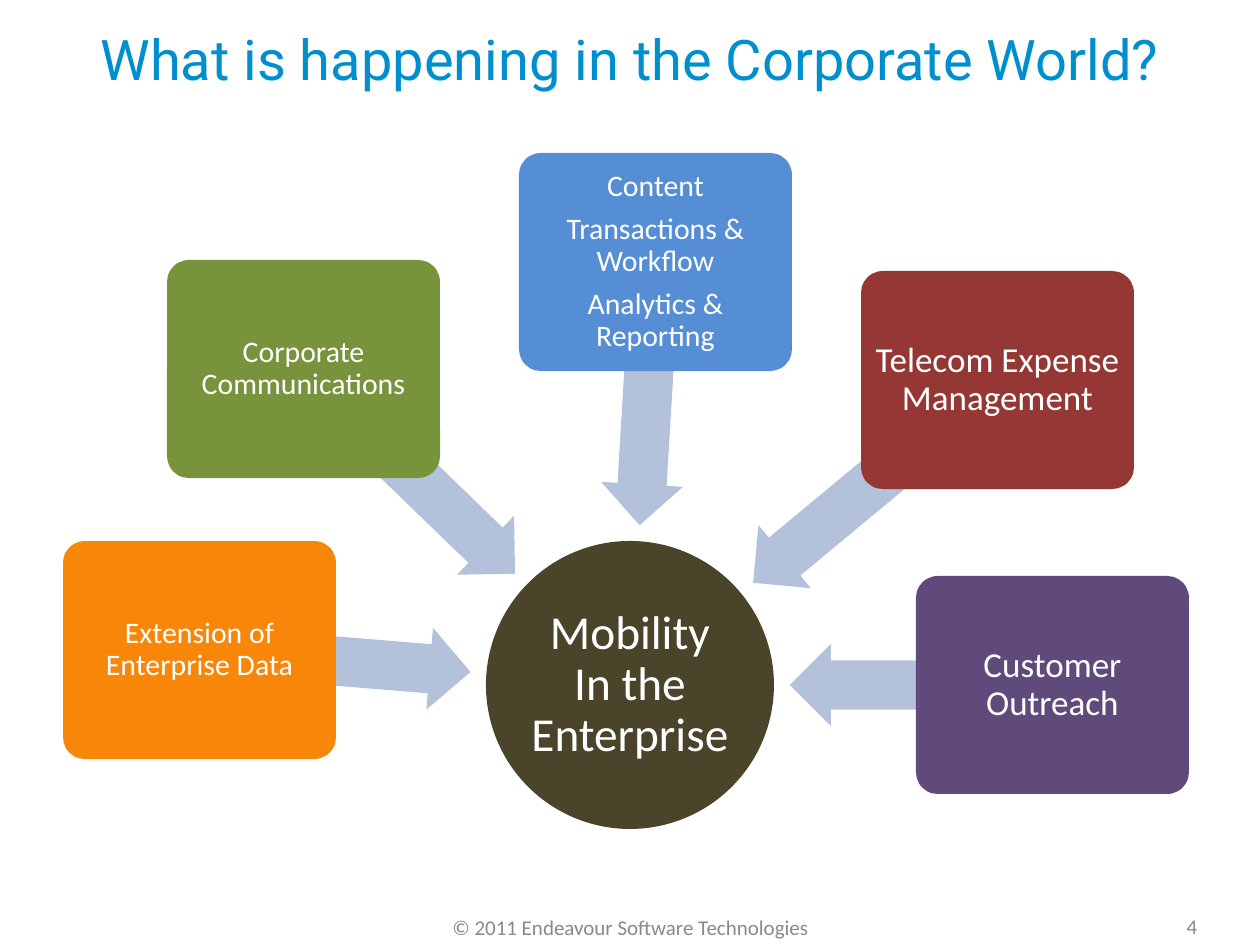
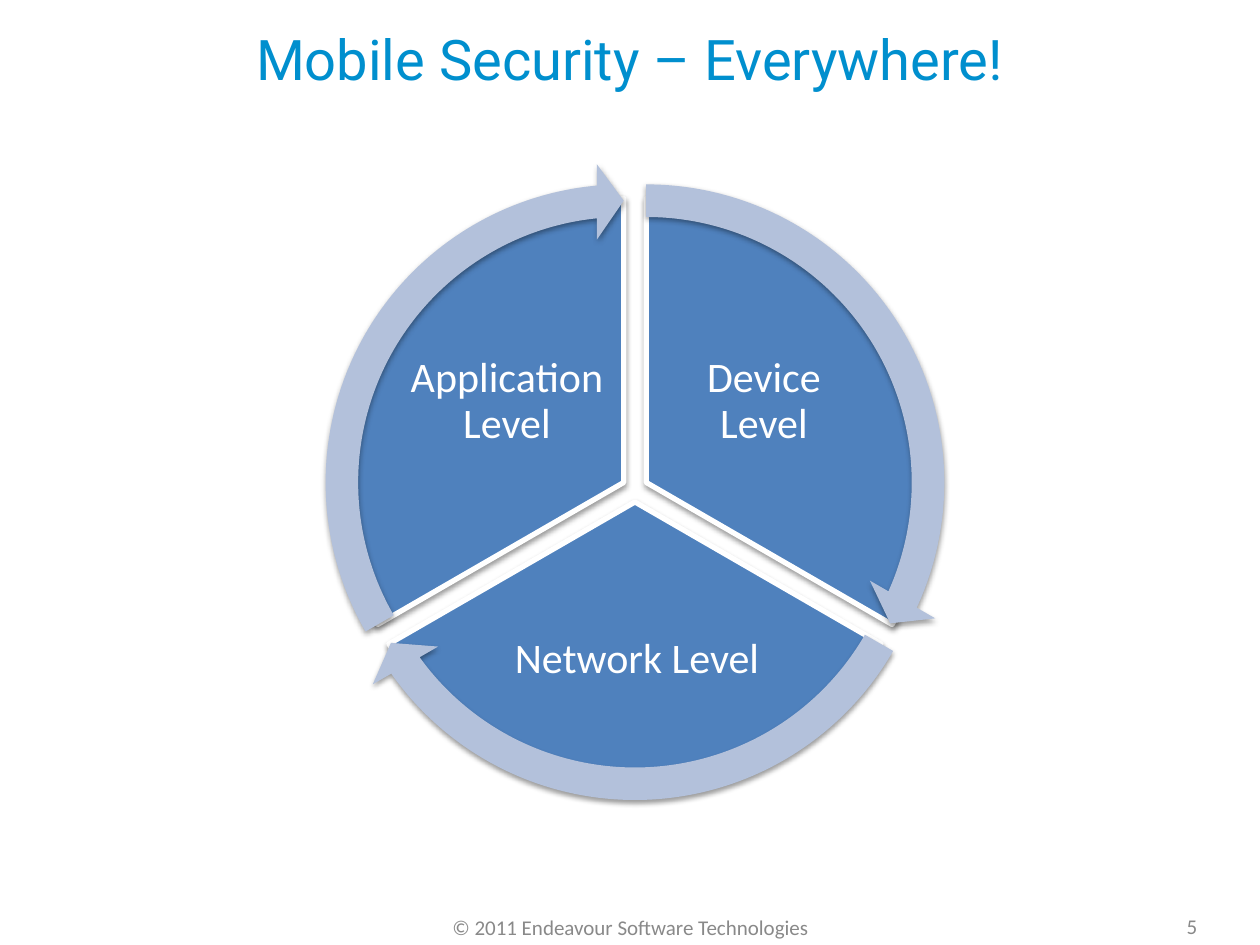
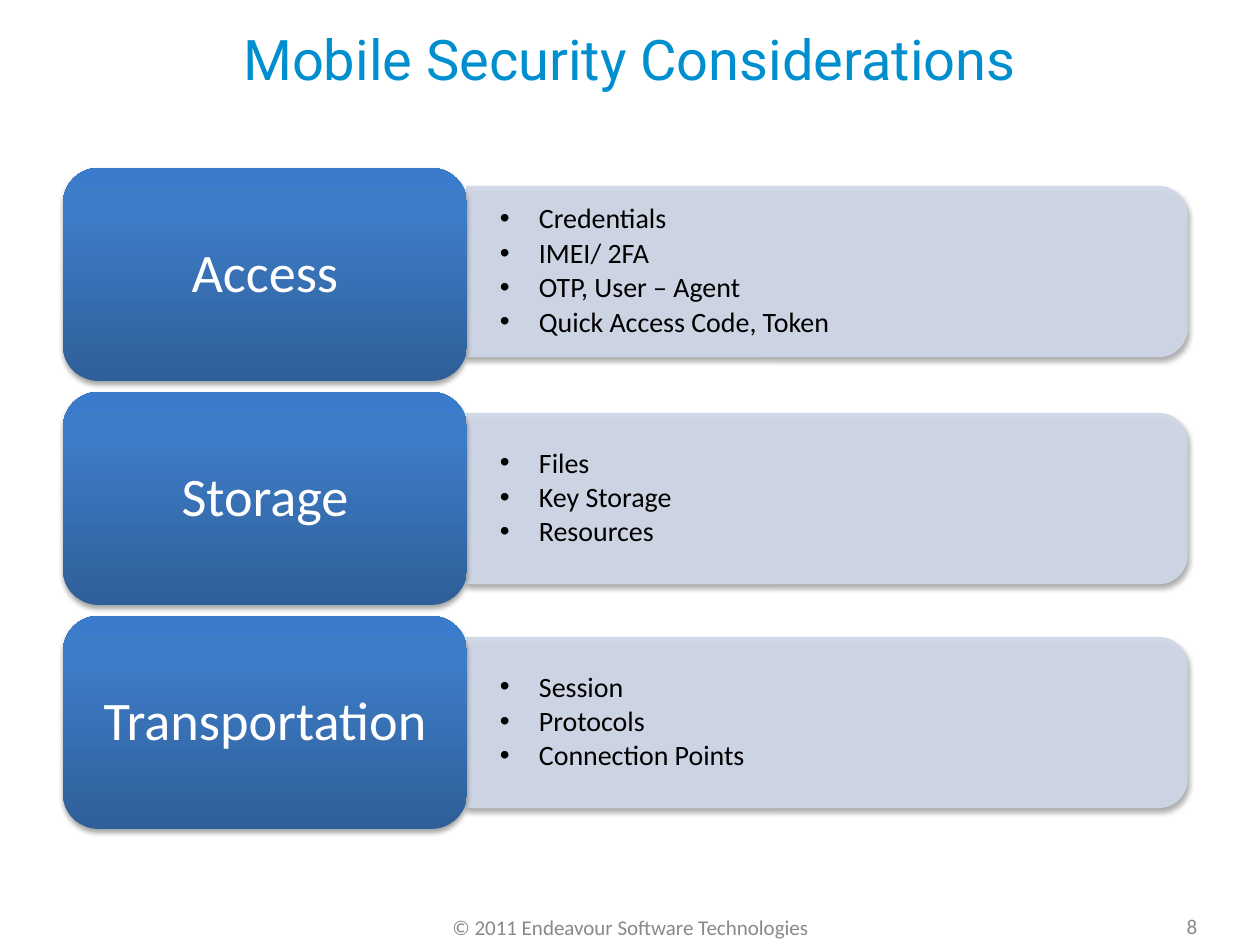
from collections import namedtuple
from copy import deepcopy
from dataclasses import dataclass
from math import atan2, cos, degrees, hypot, radians, sin

from lxml.etree import SubElement
from pptx import Presentation
from pptx.dml.color import RGBColor
from pptx.enum.shapes import MSO_SHAPE
from pptx.enum.text import MSO_ANCHOR, PP_ALIGN
from pptx.oxml.ns import qn
from pptx.util import Pt

Box = namedtuple("Box", "x y w h")


@dataclass(frozen=True)
class Theme:
    title: str = "008FCE"
    muted: str = "898989"
    white: str = "FFFFFF"
    black: str = "000000"
    arrow: str = "B3C1DB"
    hub: str = "4A452A"
    orange: str = "F88608"
    green: str = "77933C"
    blue: str = "558ED5"
    red: str = "953735"
    purple: str = "604A7B"
    wedge: str = "4F81BD"
    panel: str = "D0D8E8"
    gradient: tuple = ((0, "2F5F99"), (0.8, "3D7CC7"), (1, "3A7CCB"))
    title_font: str = "Roboto"
    body_font: str = "Calibri"
    title_size: int = 32
    heading_size: int = 31
    hub_size: int = 27
    wedge_size: int = 24
    node_large: int = 20
    node_size: int = 17
    bullet_size: int = 16
    footer_size: int = 12


T = Theme()
FOOTER = "© 2011 Endeavour Software Technologies"
TITLE_BOX = Box(63, 0, 1134, 116)
FOOTER_BOX = Box(431, 910, 399, 35)
NUMBER_BOX = Box(1124, 908, 136, 37)


# Shared helpers
def px(n):
    return round(n * 914400 / 126)


def centred(cx, cy, w, h):
    return Box(cx - w / 2, cy - h / 2, w, h)


def place(box):
    return [px(n) for n in box]


def set_text(s, text, size, color, font=T.body_font, align=PP_ALIGN.CENTER,
             insets=None, after=None, bullets=False):
    tf = s.text_frame
    tf.word_wrap = True
    tf.vertical_anchor = MSO_ANCHOR.MIDDLE
    if insets:
        tf.margin_left = tf.margin_right = px(insets[0])
        tf.margin_top = tf.margin_bottom = px(insets[1])
    tf.text = text
    for p in tf.paragraphs:
        p.alignment = align
        if after is not None:
            p.line_spacing = 0.9
            p.space_after = Pt(size * after)
        if bullets:
            p.level = 1
            pPr = p._p.get_or_add_pPr()
            pPr.set("marL", str(px(63)))
            pPr.set("indent", str(px(-39)))
            SubElement(pPr, qn("a:buFont"), typeface="Arial")
            SubElement(pPr, qn("a:buChar"), char="•")
        for r in p.runs:
            r.font.name = font
            r.font.size = Pt(size)
            r.font.color.rgb = RGBColor.from_string(color)


def add_label(slide, box, text, size, color, **style):
    s = slide.shapes.add_textbox(*place(box))
    set_text(s, text, size, color, **style)


def add_shape(slide, kind, box, fill=None, rotation=0, adjust=()):
    s = slide.shapes.add_shape(kind, *place(box))
    s.rotation = rotation
    s.shadow.inherit = False
    s.line.fill.background()
    if fill:
        s.fill.solid()
        s.fill.fore_color.rgb = RGBColor.from_string(fill)
    for i, value in enumerate(adjust):
        s.adjustments[i] = value
    return s


def set_line(s, color, width):
    s.line.color.rgb = RGBColor.from_string(color)
    s.line.width = Pt(width)


def set_alpha(parent, percent):
    for clr in list(parent.iter(qn("a:srgbClr"))):
        SubElement(clr, qn("a:alpha"), val=str(percent * 1000))


def add_shadow(s, alpha, distance):
    effects = s._element.spPr.find(qn("a:effectLst"))
    shadow = SubElement(effects, qn("a:outerShdw"), blurRad=str(Pt(3.1)),
                        dist=str(Pt(distance)), dir="5400000", rotWithShape="0")
    SubElement(shadow, qn("a:srgbClr"), val=T.black)
    set_alpha(shadow, alpha)


def set_gradient(s, stops):
    s.fill.gradient()
    s.fill.gradient_angle = 90
    gs_list = s._element.spPr.find(".//" + qn("a:gsLst"))
    while len(gs_list) < len(stops):
        gs_list.append(deepcopy(gs_list[0]))
    for stop, (position, color) in zip(s.fill.gradient_stops, stops):
        stop.position = position
        stop.color.rgb = RGBColor.from_string(color)


# Title and footer of every slide
def add_slide(prs, title, number):
    slide = prs.slides.add_slide(prs.slide_layouts[5])
    s = slide.shapes.title
    s.left, s.top, s.width, s.height = place(TITLE_BOX)
    set_text(s, title, T.title_size, T.title, font=T.title_font)
    for box, text in ((FOOTER_BOX, FOOTER), (NUMBER_BOX, str(number))):
        add_label(slide, box, text, T.footer_size, T.muted)
    return slide


# Hub with boxes pointing at it
NODES = [
    (0, 388, T.orange, T.node_size, "Extension of Enterprise Data"),
    (104, 107, T.green, T.node_size, "Corporate Communications"),
    (456, 0, T.blue, T.node_size,
     "Content\nTransactions & Workflow\nAnalytics & Reporting"),
    (798, 118, T.red, T.node_large, "Telecom Expense Management"),
    (853, 423, T.purple, T.node_large, "Customer Outreach"),
]


def draw_hub(slide, box):
    diameter, tip_radius, arrow_h = 288, 160, 82
    node_w, node_h = 273, 218
    cx, cy = box.x + box.w / 2, box.y + box.h - diameter / 2

    s = add_shape(slide, MSO_SHAPE.OVAL, centred(cx, cy, diameter, diameter), T.hub)
    set_text(s, "Mobility In the Enterprise", T.hub_size, T.white,
             insets=(2, 2), after=0.35)

    for x, y, color, size, text in NODES:
        node = Box(box.x + x, box.y + y, node_w, node_h)
        # The arrow runs from the node's centre towards the hub
        dx, dy = node.x + node_w / 2 - cx, node.y + node_h / 2 - cy
        reach = hypot(dx, dy)
        middle = (reach + tip_radius) / 2 / reach
        add_shape(slide, MSO_SHAPE.LEFT_ARROW,
                  centred(cx + dx * middle, cy + dy * middle,
                          reach - tip_radius, arrow_h),
                  T.arrow, degrees(atan2(dy, dx)) % 360, (0.6, 0.5))
        s = add_shape(slide, MSO_SHAPE.ROUNDED_RECTANGLE, node, color, adjust=(0.1,))
        set_text(s, text, size, T.white, insets=(5, 5), after=0.35)


# Three wedges with a ring of arrows: start angle, label offset and size
WEDGES = [
    (270, 129, -87, 203, 169, "Device Level"),
    (30, 2, 171, 304, 149, "Network Level"),
    (150, -128, -87, 203, 169, "Application Level"),
]


def draw_cycle(slide, box):
    pie_d, ring_d, spread, sweep = 568, 639, 13, 120
    cx, cy = box.x + box.w / 2, box.y + box.h / 2
    unit = 0.6  # adjustment value of one degree
    arrows = []
    for start, dx, dy, w, h, text in WEDGES:
        middle = radians(start + sweep / 2)
        wx, wy = cx + spread * cos(middle), cy + spread * sin(middle)
        s = add_shape(slide, MSO_SHAPE.PIE, centred(wx, wy, pie_d, pie_d), T.wedge,
                      adjust=(start * unit, (start + sweep) % 360 * unit))
        set_line(s, T.white, 3)
        add_shadow(s, 38, 1.6)
        add_label(slide, centred(cx + dx, cy + dy, w, h), text, T.wedge_size,
                  T.white, insets=(4, 4), after=0.35)
        arrows.append((start, centred(wx, wy, ring_d, ring_d)))

    for start, ring in arrows:
        head = (start + 114.54) % 360
        s = add_shape(slide, MSO_SHAPE.CIRCULAR_ARROW, ring, T.arrow,
                      adjust=(0.051, 5.46 * unit, head * unit, start * unit, 0.059))
        add_shadow(s, 38, 1.6)


# Rows of a heading block and a bullet panel: panel shift, heading, bullets
ROWS = [
    (-3, "Access", "Credentials\nIMEI/ 2FA\nOTP, User – Agent\nQuick Access Code, Token"),
    (0, "Storage", "Files\nKey Storage\nResources"),
    (0, "Transportation", "Session\nProtocols\nConnection Points"),
]


def draw_rows(slide, box):
    gap, block_w, panel_h = 11, 404, 170
    block_h = (box.h - gap * (len(ROWS) - 1)) / len(ROWS)
    panel_x, panel_w = box.x + block_w, box.w - block_w
    for i, (shift, heading, bullets) in enumerate(ROWS):
        block = Box(box.x, box.y + i * (block_h + gap), block_w, block_h)
        cy = block.y + block_h / 2 + shift
        # Turned by 90 degrees, so its width and height change places
        s = add_shape(slide, MSO_SHAPE.ROUND_2_SAME_RECTANGLE,
                      centred(panel_x + panel_w / 2, cy, panel_h, panel_w),
                      T.panel, 90)
        set_line(s, T.panel, 0.75)
        set_alpha(s._element.spPr, 90)
        add_shadow(s, 35, 1.8)
        add_label(slide, Box(panel_x, cy - 77, panel_w - 9, 154), bullets,
                  T.bullet_size, T.black, align=PP_ALIGN.LEFT,
                  insets=(9, 4), after=0.15, bullets=True)

        s = add_shape(slide, MSO_SHAPE.ROUNDED_RECTANGLE, block)
        set_gradient(s, T.gradient)
        add_shadow(s, 35, 1.8)
        set_text(s, heading, T.heading_size, T.white, insets=(16, 8), after=0.35)


def main():
    prs = Presentation()
    prs.slide_width, prs.slide_height = px(1260), px(945)
    draw_hub(add_slide(prs, "What is happening in the Corporate World?", 4),
             Box(63, 153, 1134, 676))
    draw_cycle(add_slide(prs, "Mobile Security – Everywhere!", 5),
               Box(326, 170, 618, 638))
    draw_rows(add_slide(prs, "Mobile Security Considerations", 8),
              Box(63, 168, 1124, 661))
    prs.save("out.pptx")


if __name__ == "__main__":
    main()
